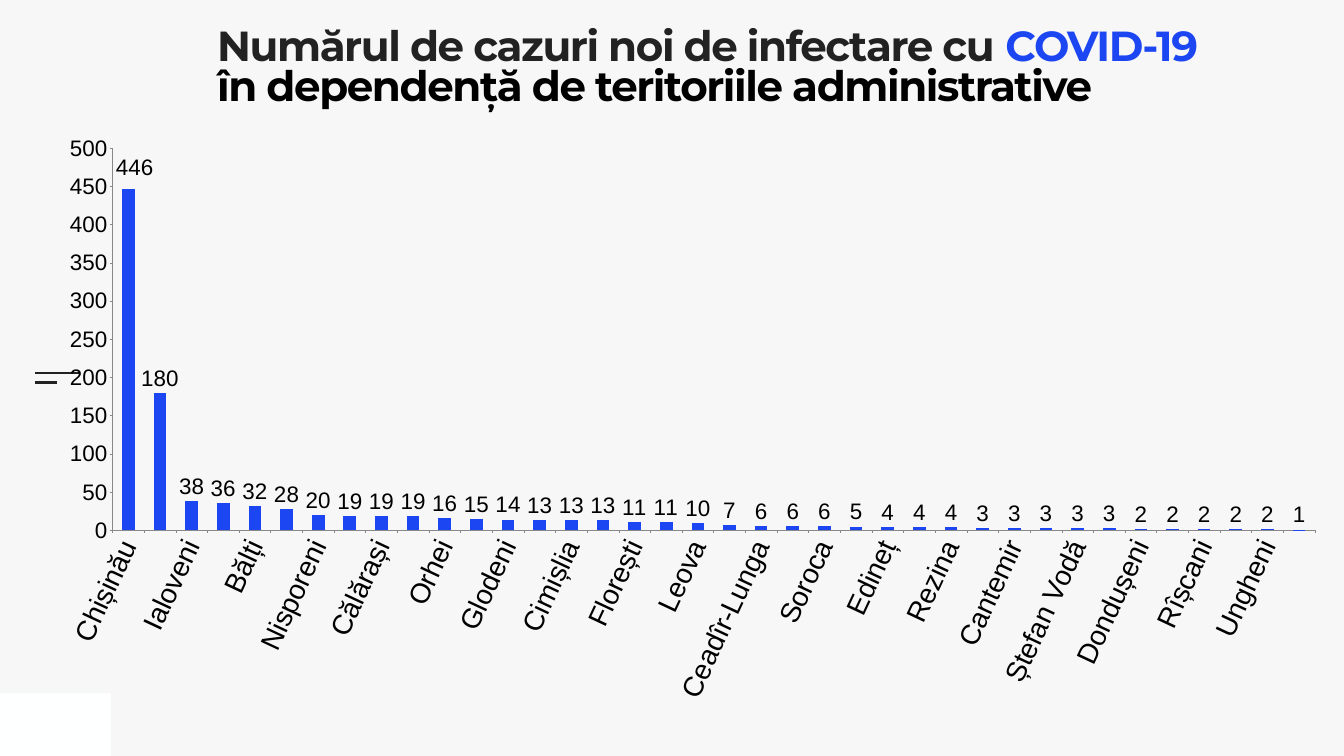
from typing import NamedTuple

from lxml.etree import SubElement
from pptx import Presentation
from pptx.chart.data import CategoryChartData
from pptx.dml.color import RGBColor
from pptx.enum.chart import XL_CHART_TYPE, XL_LABEL_POSITION, XL_TICK_MARK
from pptx.enum.shapes import MSO_CONNECTOR, MSO_SHAPE
from pptx.oxml import parse_xml
from pptx.oxml.ns import nsdecls, qn
from pptx.util import Pt

BACKGROUND = RGBColor(0xF7, 0xF7, 0xF7)
CORNER = RGBColor(0xFE, 0xFF, 0xFF)
DARK = RGBColor(0x22, 0x22, 0x22)
BLACK = RGBColor(0, 0, 0)
BLUE = RGBColor(0x1D, 0x46, 0xF3)
AXIS_GREY = RGBColor(0x88, 0x88, 0x88)


class Run(NamedTuple):
    text: str
    color: RGBColor


class Dash(NamedTuple):
    y: float
    length: float


class District(NamedTuple):
    name: str
    cases: int


TITLE = [
    [Run("Numărul de cazuri noi de infectare cu ", DARK), Run("COVID-19", BLUE)],
    [Run("în dependență de teritoriile administrative", BLACK)],
]
DASHES = [Dash(533.5, 63.4), Dash(546.5, 31.7)]
DISTRICTS = [
    District("Chișinău", 446), District("Transnistria", 180),
    District("Ialoveni", 38), District("Strășeni", 36),
    District("Bălți", 32), District("Anenii Noi", 28),
    District("Nisporeni", 20), District("Cahul", 19),
    District("Călărași", 19), District("Telenești", 19),
    District("Orhei", 16), District("Fălești", 15),
    District("Glodeni", 14), District("Căușeni", 13),
    District("Cimișlia", 13), District("Drochia", 13),
    District("Florești", 11), District("Șoldănești", 11),
    District("Leova", 10), District("Criuleni", 7),
    District("Ceadîr-Lunga", 6), District("Sîngerei", 6),
    District("Soroca", 6), District("Comrat", 5),
    District("Edineț", 4), District("Ocnița", 4),
    District("Rezina", 4), District("Basarabeasca", 3),
    District("Cantemir", 3), District("Dubăsari", 3),
    District("Ștefan Vodă", 3), District("Vulcănești", 3),
    District("Dondușeni", 2), District("Hîncești", 2),
    District("Rîșcani", 2), District("Taraclia", 2),
    District("Ungheni", 2), District("Briceni", 1),
]


def add_text(s, paragraphs, left, top, width, height, *, size, font,
             bold=False, line_spacing=1.0, tracking=0):
    """Add a text box without insets; tracking is in points."""
    tf = s.shapes.add_textbox(Pt(left), Pt(top), Pt(width), Pt(height)).text_frame
    tf.word_wrap = True
    tf.margin_left = tf.margin_top = tf.margin_right = tf.margin_bottom = 0
    for i, runs in enumerate(paragraphs):
        p = tf.add_paragraph() if i else tf.paragraphs[0]
        p.line_spacing = line_spacing
        for run in runs:
            r = p.add_run()
            r.text = run.text
            r.font.size, r.font.name, r.font.bold = Pt(size), font, bold
            r.font.color.rgb = run.color
            r.font._element.set("spc", str(tracking * 100))


def add_dash(s, dash: Dash, left: float) -> None:
    line = s.shapes.add_connector(MSO_CONNECTOR.STRAIGHT, Pt(left), Pt(dash.y),
                                  Pt(left + dash.length), Pt(dash.y))
    line.line.color.rgb = DARK
    line.line.width = Pt(3)
    SubElement(line._element.spPr, qn("a:effectLst"))


def manual_layout(**values):
    """Build a c:layout element from the children of its manualLayout."""
    inner = "".join(f'<c:{key} val="{value}"/>' for key, value in values.items())
    return parse_xml(f'<c:layout {nsdecls("c")}><c:manualLayout>{inner}'
                     "</c:manualLayout></c:layout>")


def set_font(font, size: float) -> None:
    font.size, font.name = Pt(size), "Arial"
    font.color.rgb = BLACK


def style_axis(axis, size: float) -> None:
    axis.has_major_gridlines = False
    axis.major_tick_mark = XL_TICK_MARK.OUTSIDE
    axis.minor_tick_mark = XL_TICK_MARK.NONE
    axis.format.line.color.rgb = AXIS_GREY
    axis.format.line.width = Pt(0.75)
    set_font(axis.tick_labels.font, size)


def add_cases_chart(s) -> None:
    data = CategoryChartData()
    data.categories = [d.name for d in DISTRICTS]
    data.add_series("Series 1", [d.cases for d in DISTRICTS])
    chart = s.shapes.add_chart(XL_CHART_TYPE.COLUMN_CLUSTERED, Pt(79.2), Pt(192.96),
                               Pt(1812.24), Pt(853.2), data).chart
    chart.has_legend = chart.has_title = False
    set_font(chart.font, 40)
    style_axis(chart.category_axis, 40)
    style_axis(chart.value_axis, 32)
    chart.value_axis.minimum_scale, chart.value_axis.maximum_scale = 0, 500
    chart.value_axis.major_unit = 50
    body = chart.category_axis._element.find(qn("c:txPr")).find(qn("a:bodyPr"))
    body.set("rot", str(-65 * 60000))
    body.set("vert", "horz")

    plot = chart.plots[0]
    plot.gap_width = 150
    plot.vary_by_categories = False
    series = plot.series[0]
    series.format.fill.solid()
    series.format.fill.fore_color.rgb = BLUE
    labels = series.data_labels
    labels.show_value = True
    labels.position = XL_LABEL_POSITION.OUTSIDE_END
    set_font(labels.font, 32)

    # The tallest column's label moves clear of the value axis.
    first = series.points[0].data_label
    set_font(first.font, 32)
    first.position = XL_LABEL_POSITION.OUTSIDE_END
    idx = labels._element.find(qn("c:dLbl")).find(qn("c:idx"))
    idx.addnext(manual_layout(x=0.005, y=-0.013))

    area = chart._chartSpace.chart.plotArea
    for old in area.findall(qn("c:layout")):
        area.remove(old)
    area.insert(0, manual_layout(layoutTarget="inner", xMode="edge", yMode="edge",
                                 x=0.045, y=0.022, w=0.948, h=0.64))


def main() -> None:
    prs = Presentation()
    prs.slide_width, prs.slide_height = Pt(1920.24), Pt(1080)
    s = prs.slides.add_slide(prs.slide_layouts[6])
    s.background.fill.solid()
    s.background.fill.fore_color.rgb = BACKGROUND

    corner = s.shapes.add_shape(MSO_SHAPE.RECTANGLE, 0, Pt(990.7), Pt(158.4), Pt(89.3))
    corner.shadow.inherit = False
    corner.fill.solid()
    corner.fill.fore_color.rgb = CORNER
    corner.line.fill.background()
    for dash in DASHES:
        add_dash(s, dash, left=49.7)

    add_text(s, TITLE, 310.3, 41.8, 1441.4, 196.6, size=60, font="Montserrat",
             bold=True, line_spacing=0.8, tracking=-2)
    add_cases_chart(s)
    prs.save("out.pptx")


if __name__ == "__main__":
    main()
